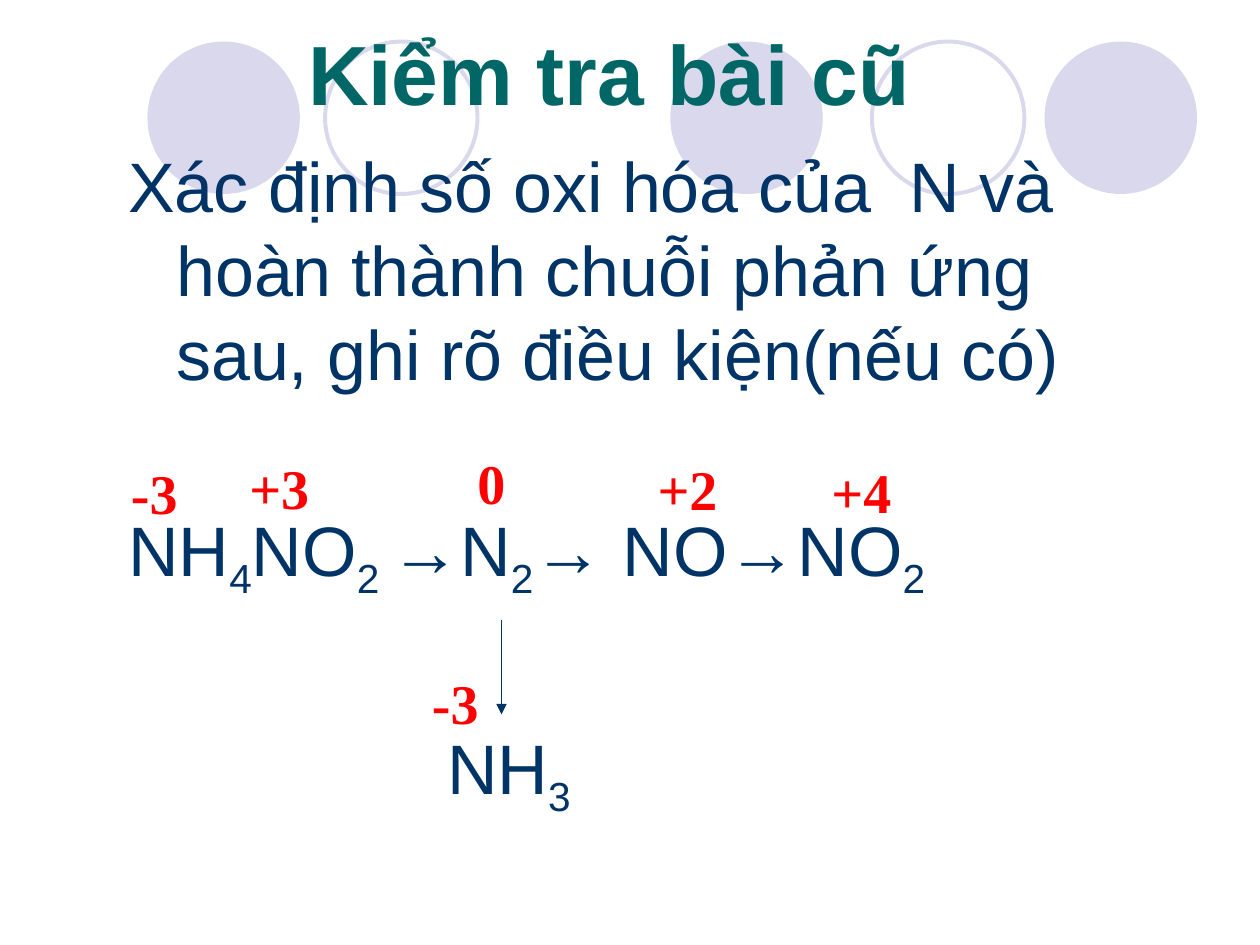
import pptx
import pptx.util
import pptx.dml.color
import pptx.enum.shapes
import pptx.enum.text
import pptx.oxml
import pptx.oxml.ns
import lxml.etree

Inches = pptx.util.Inches
Pt = pptx.util.Pt
SHAPE = pptx.enum.shapes.MSO_SHAPE

COLORS = {"circle": "D9D8EC", "title": "006666", "body": "003366", "oxidation": "FF0000"}


def rgb(name):
    return pptx.dml.color.RGBColor.from_string(COLORS[name])


def add_run(p, text, size, color, font="Arial", bold=False, subscript=False):
    r = p.add_run()
    r.text = text
    r.font.size = Pt(size)
    r.font.name = font
    r.font.bold = bold
    r.font.color.rgb = rgb(color)
    if subscript:
        r.font._element.set("baseline", "-25000")


def add_formula(p, parts):
    for i, text in enumerate(parts):
        add_run(p, text, 40, "body", subscript=i % 2 == 1)


def add_label_box(s, left, top, width, height):
    tf = s.shapes.add_textbox(left, top, width, height).text_frame
    tf.word_wrap = False
    tf.auto_size = pptx.enum.text.MSO_AUTO_SIZE.SHAPE_TO_FIT_TEXT
    return tf.paragraphs[0]


def add_circles(s, top, size):
    group = s.shapes.add_group_shape()
    for left, filled in ((5.32, True), (8.29, True), (1.17, True), (6.92, False), (2.58, False)):
        sp = group.shapes.add_shape(SHAPE.OVAL, Inches(left), top, size, size)
        sp.shadow.inherit = False
        if filled:
            sp.fill.solid()
            sp.fill.fore_color.rgb = rgb("circle")
            sp.line.fill.background()
        else:
            sp.fill.background()
            sp.line.color.rgb = rgb("circle")
            sp.line.width = Pt(2.25)


def add_title(s, left, top, width, height):
    sp = s.shapes.add_shape(SHAPE.ROUNDED_RECTANGLE, left, top, width, height)
    sp.adjustments[0] = 0.22
    sp.shadow.inherit = False
    sp.fill.background()
    sp.line.fill.background()
    tf = sp.text_frame
    tf.word_wrap = True
    tf.vertical_anchor = pptx.enum.text.MSO_ANCHOR.MIDDLE
    p = tf.paragraphs[0]
    p.alignment = pptx.enum.text.PP_ALIGN.CENTER
    p.line_spacing = 0.9
    add_run(p, "Kiểm tra bài cũ", 48, "title", bold=True)


def add_question(s, left, top, width, height):
    tf = s.shapes.add_textbox(left, top, width, height).text_frame
    tf.word_wrap = True
    question = tf.paragraphs[0]
    question.space_before = Pt(8)
    add_run(question, "Xác định số oxi hóa của  N và hoàn thành chuỗi phản ứng sau, "
            "ghi rõ điều kiện(nếu có)", 40, "body")
    chain = tf.add_paragraph()
    chain.space_before = Pt(64)
    add_formula(chain, ["NH", "4", "NO", "2 ", "→N", "2", "→ NO→NO", "2"])
    for p in tf.paragraphs:
        pPr = p._p.get_or_add_pPr()
        pPr.set("marL", str(Inches(0.38)))
        pPr.set("indent", str(Inches(-0.38)))


def add_branch(s, x, top, bottom):
    line = s.shapes.add_connector(pptx.enum.shapes.MSO_CONNECTOR.STRAIGHT, x, top, x, bottom)
    line.line.color.rgb = rgb("body")
    line.line.width = Pt(0.75)
    tail = lxml.etree.SubElement(line.line._get_or_add_ln(), pptx.oxml.ns.qn("a:tailEnd"))
    tail.set("type", "triangle")
    lxml.etree.SubElement(line._element.spPr, pptx.oxml.ns.qn("a:effectLst"))
    p = add_label_box(s, Inches(3.45), Inches(5.7), Inches(1.22), Inches(0.77))
    add_formula(p, ["NH", "3"])


def add_oxidation_numbers(s, height):
    for text, left, top, width in (
        ("+2", 5.12, 3.56, 0.68),
        ("0", 3.69, 3.51, 0.43),
        ("-3", 3.33, 5.26, 0.58),
        ("-3", 0.94, 3.59, 0.58),
        ("+4", 6.5, 3.58, 0.68),
        ("+3", 1.88, 3.55, 0.68),
    ):
        p = add_label_box(s, Inches(left), Inches(top), Inches(width), height)
        add_run(p, text, 32, "oxidation", font="Times New Roman", bold=True)


def main():
    prs = pptx.Presentation()
    prs.slide_width = Inches(10)
    prs.slide_height = Inches(7.5)
    s = prs.slides.add_slide(prs.slide_layouts[6])
    add_circles(s, Inches(0.33), Inches(1.21))
    add_title(s, Inches(0.5), Inches(0), Inches(8.67), Inches(1.25))
    add_question(s, Inches(0.92), Inches(1.08), Inches(8.41), Inches(4.81))
    add_branch(s, Inches(3.98), Inches(4.92), Inches(5.67))
    add_oxidation_numbers(s, Inches(0.64))
    prs.save("out.pptx")


if __name__ == "__main__":
    main()
